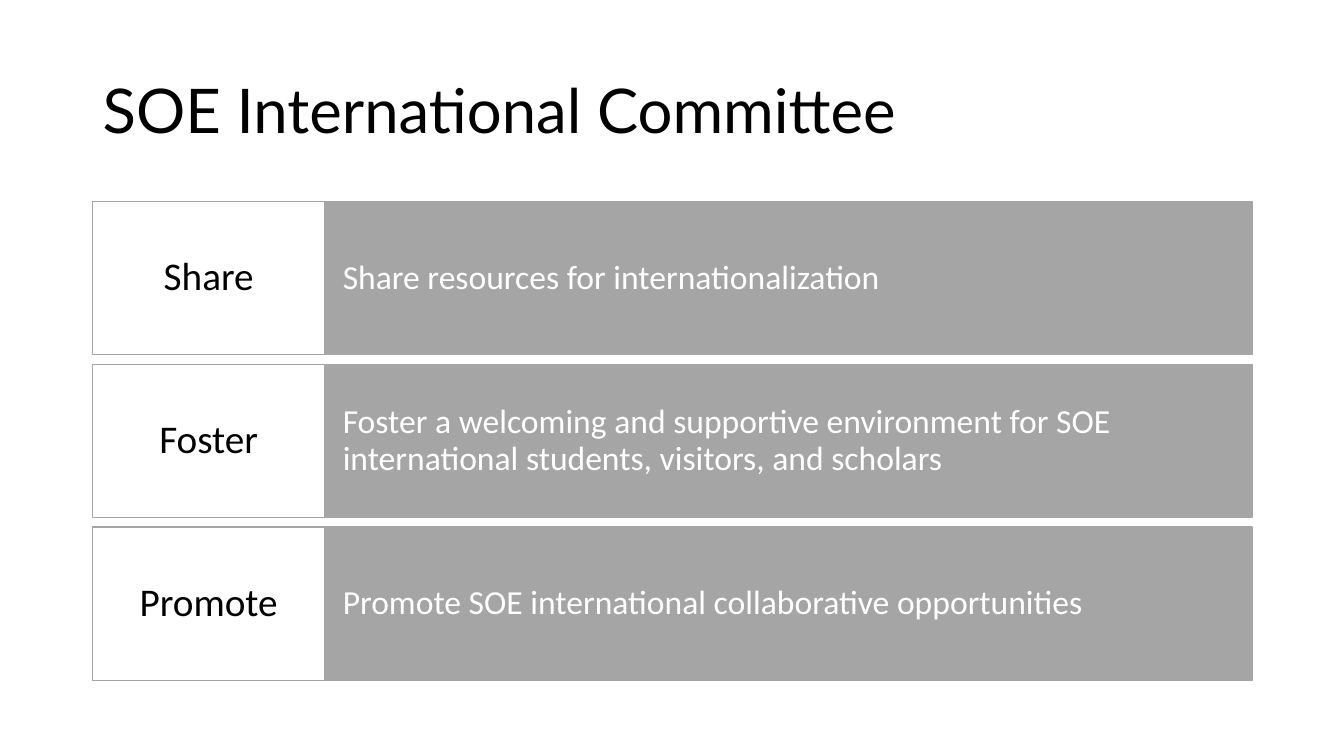
from pptx import Presentation
from pptx.dml.color import RGBColor
from pptx.enum.shapes import MSO_SHAPE
from pptx.enum.text import MSO_ANCHOR, PP_ALIGN
from pptx.util import Inches, Pt

HUES = {"ink": "000000", "gray": "A5A5A5", "white": "FFFFFF"}
LEFT, TOP, BOTTOM = 0.92, 2, 6.75
HEAD, BODY, HIGH = 2.3, 9.2, 1.52
GOALS = [
    ("Share", "Share resources for internationalization"),
    ("Foster", "Foster a welcoming and supportive environment for SOE "
               "international students, visitors, and scholars"),
    ("Promote", "Promote SOE international collaborative opportunities"),
]


class Deck:
    """Hold the style and the current slide."""

    def __init__(self):
        self.show = Presentation()
        self.show.slide_width = Inches(13.33)
        self.show.slide_height = Inches(7.5)
        self.slide = self.show.slides.add_slide(self.show.slide_layouts[6])

    def hue(self, name):
        return RGBColor.from_string(HUES[name])

    def label(self, shape, text, size, hue, pad, font="Calibri", align=PP_ALIGN.LEFT):
        frame = shape.text_frame
        frame.text = text
        frame.word_wrap = True
        frame.vertical_anchor = MSO_ANCHOR.MIDDLE
        frame.margin_left = frame.margin_right = Inches(pad[0])
        frame.margin_top = frame.margin_bottom = Inches(pad[1])
        para = frame.paragraphs[0]
        para.alignment = align
        para.line_spacing = 0.9
        face = para.runs[0].font
        face.name = font
        face.size = Pt(size)
        face.color.rgb = self.hue(hue)

    def title(self, text, *spot):
        box = self.slide.shapes.add_textbox(*map(Inches, spot))
        self.label(box, text, 44, "ink", (0.1, 0.05), "Lato")

    def panel(self, spot, fill, text, **style):
        rect = self.slide.shapes.add_shape(MSO_SHAPE.RECTANGLE, *map(Inches, spot))
        rect.shadow.inherit = False
        rect.fill.solid()
        rect.fill.fore_color.rgb = self.hue(fill)
        rect.line.color.rgb = self.hue("gray")
        rect.line.width = Pt(1)
        self.label(rect, text, **style)

    def goal(self, top, name, text):
        self.panel((LEFT + HEAD, top, BODY, HIGH), "gray", text,
                   size=24, hue="white", pad=(0.18, 0.39))
        self.panel((LEFT, top, HEAD, HIGH), "white", name,
                   size=28, hue="ink", pad=(0.12, 0.15), align=PP_ALIGN.CENTER)


def main():
    deck = Deck()
    deck.title("SOE International Committee", LEFT, 0.4, HEAD + BODY, 1.45)
    step = (BOTTOM - TOP - HIGH) / (len(GOALS) - 1)
    for row, (name, text) in enumerate(GOALS):
        deck.goal(TOP + row * step, name, text)
    deck.show.save("out.pptx")


if __name__ == "__main__":
    main()
